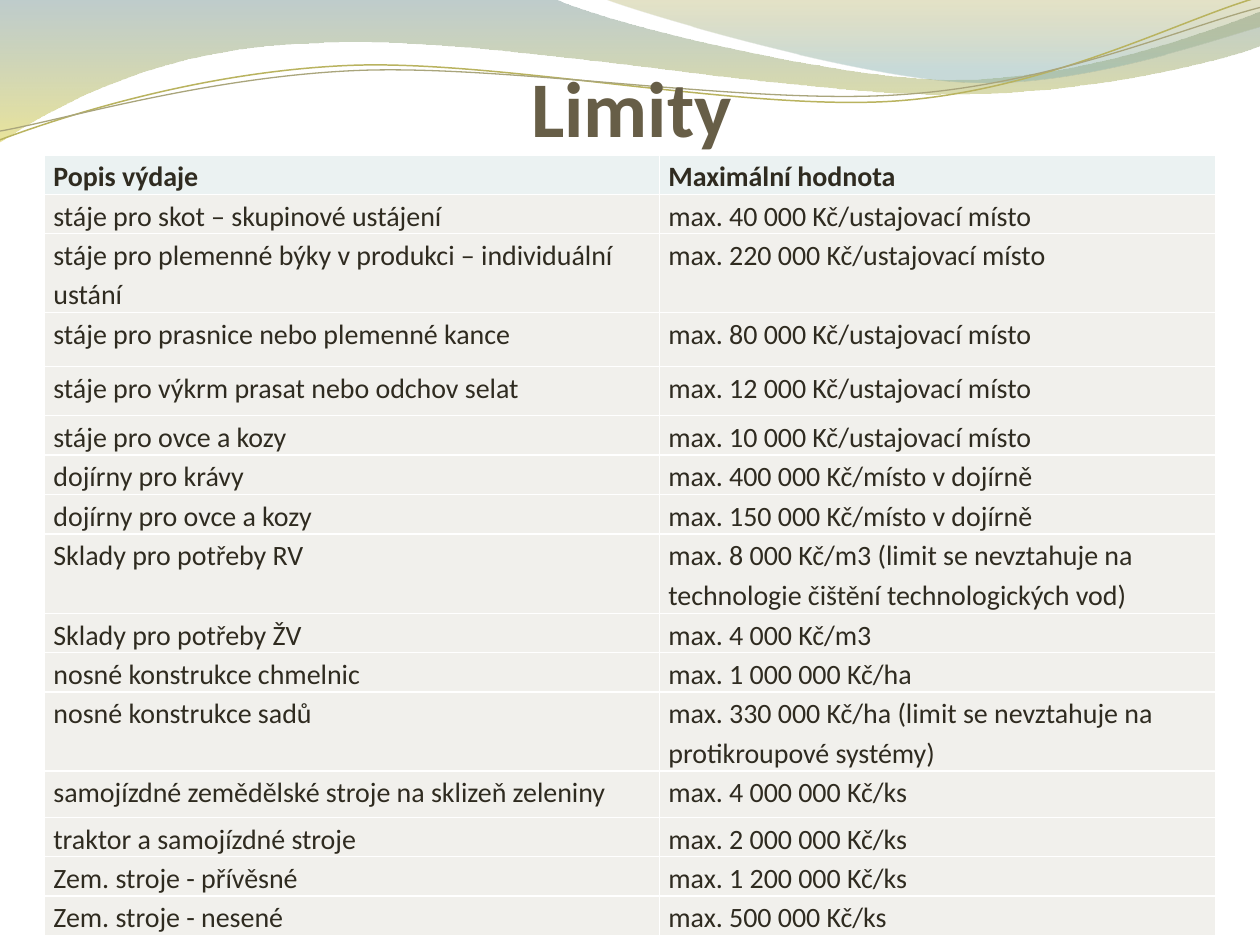
from math import cos, radians, sin

from lxml import etree
from pptx import Presentation
from pptx.dml.color import RGBColor
from pptx.enum.text import MSO_ANCHOR, PP_ALIGN
from pptx.oxml.ns import qn
from pptx.util import Pt

BOTTOM = MSO_ANCHOR.BOTTOM
CENTER = PP_ALIGN.CENTER
TITLE_ONLY = 5

FONT = "Calibri"
TITLE_COLOR = RGBColor(0x67, 0x5E, 0x47)
TEXT_COLOR = RGBColor(0x2F, 0x2B, 0x20)
HEADER_FILL = RGBColor(0xEB, 0xF2, 0xF2)
BODY_FILL = RGBColor(0xF1, 0xF0, 0xEC)
BORDER_COLOR = RGBColor(0xFF, 0xFF, 0xFF)
TEAL = RGBColor(0x71, 0x8F, 0x8E)
YELLOW = RGBColor(0xD8, 0xCE, 0x49)
OLIVE = RGBColor(0xA7, 0xA0, 0x45)
BLUE_GREEN = RGBColor(0x84, 0xAE, 0xAC)
LINE_OLIVE = RGBColor(0xB9, 0xB3, 0x5F)
LINE_TAN = RGBColor(0xA9, 0xA5, 0x7C)

LINE_TILT = -2.7

# Each path: segments of one point (start or line) or three (Bezier curve).
# Gradient stops: position, colour, opacity in percent.
BANDS = [
    ([[(0, 0)],
      [(316.8, -0.7)],
      [(342.7, 12.2), (478.1, 45.4), (545.8, 45.4)],
      [(614.2, 45.4), (689.8, 18.7), (720, 6.5)],
      [(720.7, 25.9)],
      [(707.8, 31.7), (626.4, 54.7), (537.1, 54)],
      [(447.8, 54), (275, 20.2), (185, 24.5)],
      [(92.2, 25.9), (33.1, 59.8), (-0.7, 81.4)]],
     [(0, TEAL, 45), (1, YELLOW, 55)]),
    ([[(344.9, -0.7)],
      [(366.5, 7.9), (491, 44.6), (553.7, 46.8)],
      [(616.3, 49.7), (691.9, 23), (720, 15.1)],
      [(720, 0)]],
     [(0, OLIVE, 30), (0.8, BLUE_GREEN, 45)]),
]
# Path, centre of rotation, colour, width
WAVE_LINES = [
    ([[(0, 79.9)],
      [(34.6, 67), (113.8, 41), (199.4, 37.4)],
      [(284.4, 33.8), (427, 64.1), (513.4, 57.6)],
      [(599.8, 51.1), (675.4, 10.8), (718.6, -1.4)]],
     (359.3, 41.4), LINE_OLIVE, 0.85),
    ([[(0, 74.9)],
      [(33.8, 69.1), (118.1, 43.9), (203.8, 40.3)],
      [(290.2, 36.7), (429.8, 60.5), (516.2, 54)],
      [(601.9, 48.2), (677.5, 15.1), (720, 4.3)]],
     (359.6, 42.5), LINE_TAN, 0.75),
]

# Minimum row height, description, limit
ROWS = [
    (18, "Popis výdaje", "Maximální hodnota"),
    (18, "stáje pro skot – skupinové ustájení", "max. 40 000 Kč/ustajovací místo"),
    (36.7, "stáje pro plemenné býky v produkci – individuální ustání",
     "max. 220 000 Kč/ustajovací místo"),
    (31, "stáje pro prasnice nebo plemenné kance", "max. 80 000 Kč/ustajovací místo"),
    (28.1, "stáje pro výkrm prasat nebo odchov selat", "max. 12 000 Kč/ustajovací místo"),
    (18, "stáje pro ovce a kozy", "max. 10 000 Kč/ustajovací místo"),
    (18, "dojírny pro krávy", "max. 400 000 Kč/místo v dojírně"),
    (18, "dojírny pro ovce a kozy", "max. 150 000 Kč/místo v dojírně"),
    (45.4, "Sklady pro potřeby RV",
     "max. 8 000 Kč/m3 (limit se nevztahuje na technologie čištění technologických vod)"),
    (18, "Sklady pro potřeby ŽV", "max. 4 000 Kč/m3"),
    (18, "nosné konstrukce chmelnic", "max. 1 000 000 Kč/ha"),
    (36.7, "nosné konstrukce sadů",
     "max. 330 000 Kč/ha (limit se nevztahuje na protikroupové systémy)"),
    (26.6, "samojízdné zemědělské stroje na sklizeň zeleniny", "max. 4 000 000 Kč/ks"),
    (18, "traktor a samojízdné stroje", "max. 2 000 000 Kč/ks"),
    (18, "Zem. stroje - přívěsné", "max. 1 200 000 Kč/ks"),
    (18, "Zem. stroje - nesené", "max. 500 000 Kč/ks"),
]
FIRST_COLUMN_SHARE = 4.88 / 9.29


def rotate(segments, center, degrees):
    cosine, sine = cos(radians(degrees)), sin(radians(degrees))

    def turn(point):
        x, y = point[0] - center[0], point[1] - center[1]
        return center[0] + x * cosine - y * sine, center[1] + x * sine + y * cosine

    return [[turn(point) for point in segment] for segment in segments]


def add_outline(shapes, segments, left, top, close):
    """Build an outline through all points, then bend the three-point segments."""
    points = [(Pt(left + x), Pt(top + y)) for segment in segments for x, y in segment]
    builder = shapes.build_freeform(*points[0])
    builder.add_line_segments(points[1:], close=close)
    shape = builder.convert_to_shape()
    shape.shadow.inherit = False

    steps = iter(list(shape.element.spPr.find(".//" + qn("a:path"))))
    for segment in segments:
        step = next(steps)
        if len(segment) == 3:
            curve = etree.Element(qn("a:cubicBezTo"))
            step.addprevious(curve)
            for control in (step, next(steps), next(steps)):
                curve.append(control[0])
                control.getparent().remove(control)
    return shape


def add_waves(slide, left, top):
    # Translucent gradient bands
    for segments, stops in BANDS:
        band = add_outline(slide.shapes, segments, left, top, close=True)
        band.line.fill.background()
        band.fill.gradient()
        band.fill.gradient_angle = 270
        for stop, (position, color, opacity) in zip(band.fill.gradient_stops, stops):
            stop.position = position
            stop.color.rgb = color
        colors = band.element.spPr.findall(".//" + qn("a:srgbClr"))
        for color_element, (position, color, opacity) in zip(colors, stops):
            etree.SubElement(color_element, qn("a:alpha"), val=str(opacity * 1000))

    # Thin tilted lines
    group = slide.shapes.add_group_shape()
    for segments, center, color, width in WAVE_LINES:
        level = rotate(segments, center, -LINE_TILT)
        line = add_outline(group.shapes, level, left, top, close=False)
        line.rotation = LINE_TILT
        line.fill.background()
        line.line.color.rgb = color
        line.line.width = Pt(width)


def style_font(paragraph, size, color, bold):
    font = paragraph.font
    font.name, font.size, font.bold = FONT, Pt(size), bold
    font.color.rgb = color


def place_title(slide, left, top, width, height):
    title = slide.shapes.title
    title.left, title.top, title.width, title.height = map(Pt, (left, top, width, height))
    frame = title.text_frame
    frame.text = "Limity"
    frame.vertical_anchor = BOTTOM
    frame.margin_left = frame.margin_right = frame.margin_bottom = 0
    frame.margin_top = Pt(3.6)
    paragraph = frame.paragraphs[0]
    paragraph.alignment = CENTER
    style_font(paragraph, 45, TITLE_COLOR, True)
    # Bring the title in front of the waves
    slide.shapes.element.append(title.element)


def add_borders(cell):
    properties = cell._tc.get_or_add_tcPr()
    for side in ("lnL", "lnR", "lnT", "lnB"):
        border = etree.SubElement(properties, qn("a:" + side), w=str(Pt(1)))
        fill = etree.SubElement(border, qn("a:solidFill"))
        etree.SubElement(fill, qn("a:srgbClr"), val=str(BORDER_COLOR))


def add_limits_table(slide, left, top, width, height):
    graphic_frame = slide.shapes.add_table(len(ROWS), 2, *map(Pt, (left, top, width, height)))
    table = graphic_frame.table
    table.columns[0].width = Pt(width * FIRST_COLUMN_SHARE)
    table.columns[1].width = Pt(width * (1 - FIRST_COLUMN_SHARE))
    for row_index, (row_height, *texts) in enumerate(ROWS):
        header = row_index == 0
        table.rows[row_index].height = Pt(row_height)
        for cell, text in zip(table.rows[row_index].cells, texts):
            cell.text = text
            cell.margin_left = cell.margin_right = Pt(5)
            cell.margin_top = cell.margin_bottom = 0
            add_borders(cell)
            cell.fill.solid()
            cell.fill.fore_color.rgb = HEADER_FILL if header else BODY_FILL
            paragraph = cell.text_frame.paragraphs[0]
            paragraph.line_spacing = 1.15
            style_font(paragraph, 16, TEXT_COLOR, header)
    graphic_frame.height = Pt(height)


def main():
    presentation = Presentation()
    presentation.slide_width, presentation.slide_height = Pt(720), Pt(540)
    slide = presentation.slides.add_slide(presentation.slide_layouts[TITLE_ONLY])
    add_waves(slide, 0, 0)
    place_title(slide, 37, 37.2, 648, 50.4)
    add_limits_table(slide, 25.55, 88.5, 669, 440.6)
    presentation.save("out.pptx")


if __name__ == "__main__":
    main()
